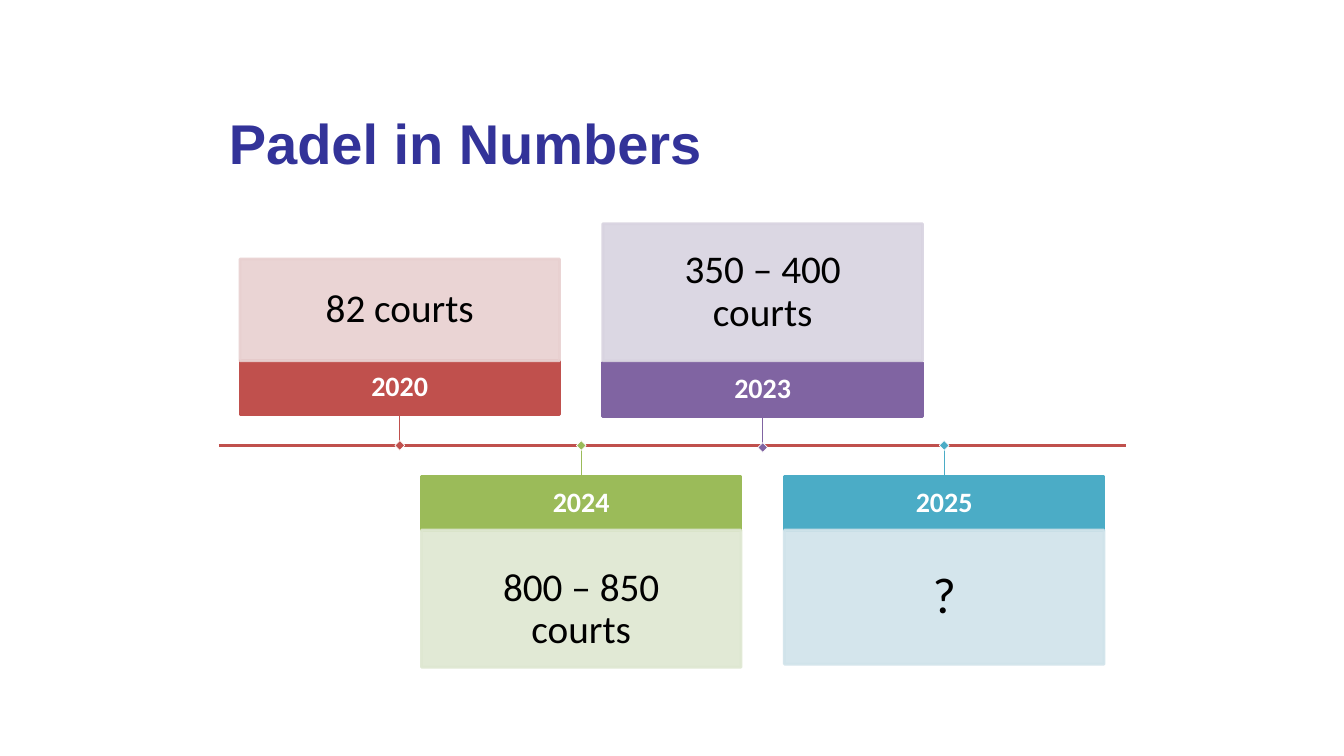
import pptx
import pptx.util
import pptx.dml.color
import pptx.enum.shapes
import pptx.enum.text
import pptx.oxml.ns
from lxml import etree

Inches, Pt = pptx.util.Inches, pptx.util.Pt
RGBColor = pptx.dml.color.RGBColor
SHAPE = pptx.enum.shapes.MSO_SHAPE
ALIGN = pptx.enum.text.PP_ALIGN
MIDDLE = pptx.enum.text.MSO_ANCHOR.MIDDLE
qn = pptx.oxml.ns.qn

NAVY = RGBColor(0x33, 0x33, 0x99)
WHITE = RGBColor(0xFF, 0xFF, 0xFF)
BLACK = RGBColor(0x00, 0x00, 0x00)
RED, PALE_RED = RGBColor(0xC0, 0x50, 0x4D), RGBColor(0xE8, 0xD0, 0xD0)
GREEN, PALE_GREEN = RGBColor(0x9B, 0xBB, 0x59), RGBColor(0xDE, 0xE7, 0xD1)
PURPLE, PALE_PURPLE = RGBColor(0x80, 0x64, 0xA2), RGBColor(0xD8, 0xD3, 0xE0)
TEAL, PALE_TEAL = RGBColor(0x4B, 0xAC, 0xC6), RGBColor(0xD0, 0xE3, 0xEA)

# Grid, in inches
LEFT, STEP, BOX_W, LABEL_H = 2.38, 1.8, 3.17, 0.53
AXIS_Y, AXIS_LEFT, AXIS_W = 4.42, 2.17, 9
STEM, DOT = 0.31, 0.07

prs = pptx.Presentation()
prs.slide_width, prs.slide_height = Inches(13.33), Inches(7.5)
s = prs.slides.add_slide(prs.slide_layouts[5])


def add_box(x, y, w, h, fill, line, width, shape=SHAPE.RECTANGLE):
    sp = s.shapes.add_shape(shape, Inches(x), Inches(y), Inches(w), Inches(h))
    sp.shadow.inherit = False
    sp.fill.solid()
    sp.fill.fore_color.rgb = fill
    sp.line.color.rgb = line
    sp.line.width = Pt(width)
    return sp


def add_line(x1, y1, x2, y2, color, width):
    ln = s.shapes.add_connector(pptx.enum.shapes.MSO_CONNECTOR.STRAIGHT,
                                Inches(x1), Inches(y1), Inches(x2), Inches(y2))
    ln.line.color.rgb = color
    ln.line.width = Pt(width)
    etree.SubElement(ln._element.spPr, qn("a:effectLst"))


# Title
title = s.shapes.title
title.left, title.top = Inches(AXIS_LEFT), Inches(0.78)
title.width, title.height = Inches(AXIS_W), Inches(1.25)
title.text_frame.text = "Padel in Numbers"
title.text_frame.vertical_anchor = MIDDLE
p = title.text_frame.paragraphs[0]
p.alignment = ALIGN.LEFT
font = p.runs[0].font
font.name, font.size, font.bold = "Arial", Pt(40), True
font.color.rgb = NAVY

# Time axis
add_line(AXIS_LEFT, AXIS_Y, AXIS_LEFT + AXIS_W, AXIS_Y, RED, 2)

# Milestones: year, text, size, colour, pale colour, above axis,
# axis offset, body height, inset, top inset
milestones = [
    ("2020", "82 courts", 28, RED, PALE_RED, True, 0, 1.01, 0.29, 0.29),
    ("2024", "800 – 850 courts", 28, GREEN, PALE_GREEN, False, 0, 1.36, 0.29, 0.51),
    ("2023", "350 – 400 courts", 28, PURPLE, PALE_PURPLE, True, 0.02, 1.36, 0.29, 0.29),
    ("2025", "?", 36, TEAL, PALE_TEAL, False, 0, 1.33, 0.38, 0.38),
]
for i, (year, text, size, color, pale, above, dy, body_h, inset, top) in enumerate(milestones):
    x = LEFT + i * STEP
    mid, axis = x + BOX_W / 2, AXIS_Y + dy
    if above:
        stem_end = axis - STEM
        label_y = stem_end - LABEL_H
        body_y = 3.58 - body_h
    else:
        stem_end = label_y = axis + STEM
        body_y = label_y + LABEL_H

    # Year band and pale body
    label = add_box(x, label_y, BOX_W, LABEL_H, color, color, 2)
    body = add_box(x, body_y, BOX_W, body_h, pale, pale, 2)
    for clr in body._element.spPr.iter(qn("a:srgbClr")):
        etree.SubElement(clr, qn("a:alpha")).set("val", "90000")

    for sp, words, pt, ink, pad, pad_top in ((label, year, 20, WHITE, 0.11, 0.11),
                                             (body, text, size, BLACK, inset, top)):
        tf = sp.text_frame
        tf.text = words
        tf.word_wrap = True
        tf.vertical_anchor = MIDDLE
        tf.margin_left = tf.margin_right = tf.margin_bottom = Inches(pad)
        tf.margin_top = Inches(pad_top)
        p = tf.paragraphs[0]
        p.alignment, p.line_spacing = ALIGN.CENTER, 0.9
        font = p.runs[0].font
        font.name, font.size, font.bold = "Calibri", Pt(pt), sp is label
        font.color.rgb = ink

    # Stem and marker on the axis
    add_line(mid, stem_end, mid, axis, color, 0.75)
    dot = add_box(mid - DOT / 2, axis - DOT / 2, DOT, DOT, color, WHITE, 0.5)
    dot.rotation = 45

prs.save("out.pptx")
